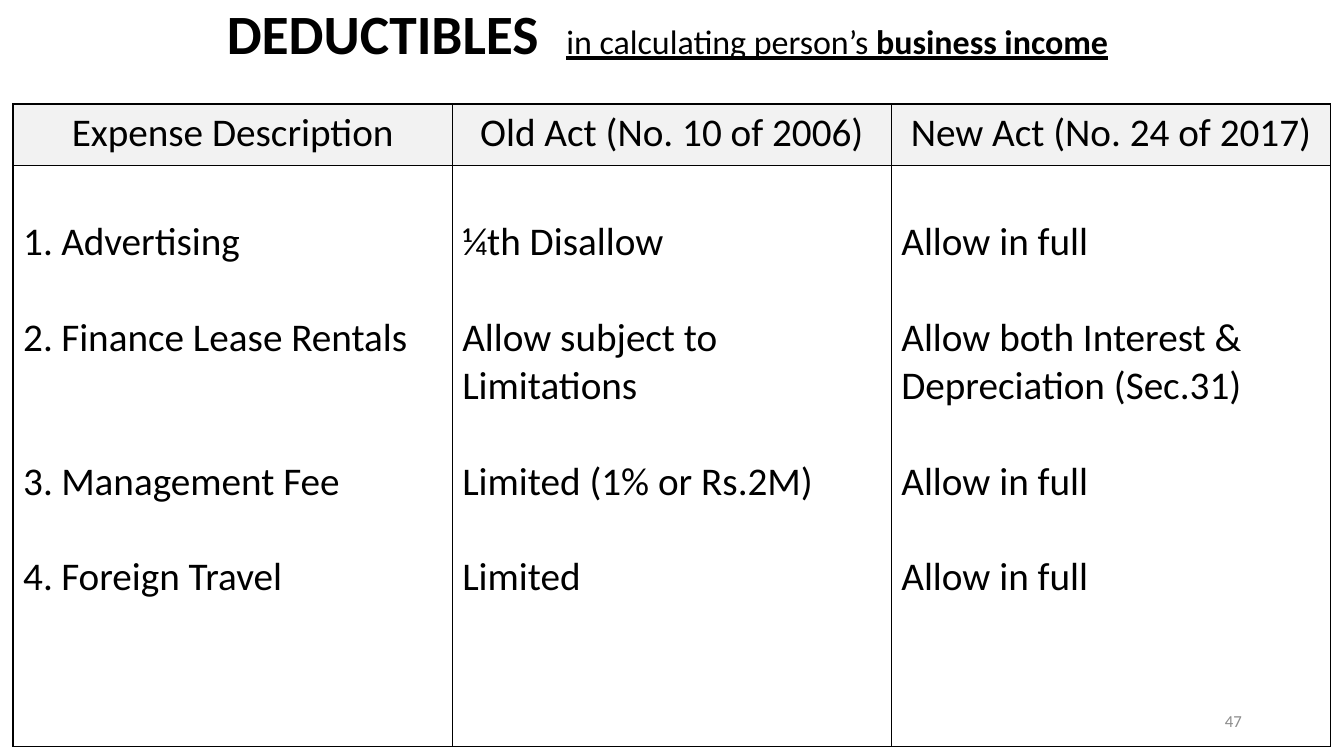
from pptx import Presentation
from pptx.dml.color import RGBColor as Rgb
from pptx.enum.text import MSO_ANCHOR as Anchor, PP_ALIGN as Align
from pptx.oxml.ns import qn
from pptx.util import Cm, Pt
from lxml.etree import SubElement as Sub

INK = {"text": "000000", "head": "F2F2F2", "body": "FFFFFF", "page": "8C8C8C"}
FACE = "Calibri"
SIZE = 28
LINE = 34.2
HEADS = ["Expense Description", "Old Act (No. 10 of 2006)", "New Act (No. 24 of 2017)"]
ITEMS = [
    ["Advertising", "Finance Lease Rentals", "Management Fee", "Foreign Travel"],
    ["¼th Disallow", "Allow subject to Limitations", "Limited (1% or Rs.2M)", "Limited"],
    ["Allow in full", "Allow both Interest & Depreciation (Sec.31)",
     "Allow in full", "Allow in full"],
]


def style(font, size, ink="text"):
    """Set the face, size and colour of a font."""
    font.name = FACE
    font.size = Pt(size)
    font.color.rgb = Rgb.from_string(INK[ink])


def place(shape, left, top, width, height):
    """Move and size a shape, in centimetres."""
    shape.left, shape.top = Cm(left), Cm(top)
    shape.width, shape.height = Cm(width), Cm(height)


def number(para):
    """Give a paragraph an automatic number and a hanging indent."""
    props = para._p.get_or_add_pPr()
    props.set("marL", str(Cm(0.96)))
    props.set("indent", str(-Cm(0.96)))
    Sub(props, qn("a:buFont"), typeface=FACE)
    Sub(props, qn("a:buAutoNum"), type="arabicPeriod")


def frame(cell, ink):
    """Fill a cell and rule its four sides."""
    props = cell._tc.get_or_add_tcPr()
    for side in ("lnL", "lnR", "lnT", "lnB"):
        line = Sub(props, qn("a:" + side), w=str(Pt(1)))
        fill = Sub(line, qn("a:solidFill"))
        Sub(fill, qn("a:srgbClr"), val=INK["text"])
    cell.fill.solid()
    cell.fill.fore_color.rgb = Rgb.from_string(INK[ink])


def add_head(slide):
    """Write the title in its placeholder."""
    title = slide.shapes.title
    place(title, 1.02, -1.57, 31.6, 3.45)
    title.text_frame.vertical_anchor = Anchor.MIDDLE
    para = title.text_frame.paragraphs[0]
    para.alignment = Align.CENTER
    for text, size, bold, under in (
        ("DEDUCTIBLES", 39.6, True, False),
        (" ", 86.4, False, False),
        ("in calculating person’s ", 24.3, False, True),
        ("business income", 24.3, True, True),
    ):
        run = para.add_run()
        run.text = text
        style(run.font, size)
        run.font.bold = bold
        run.font.underline = under


def fill_list(cell, items, listed):
    """Write one column of entries, spaced so that the rows line up."""
    cell.margin_top = Cm(1.33)
    cell.text = "\n".join(items)
    for i, para in enumerate(cell.text_frame.paragraphs):
        if i:
            para.space_before = Pt(LINE * (2 if listed and i == 2 else 1))
        if listed:
            number(para)
        style(para.font, SIZE)


def add_grid(slide):
    """Add the table that compares the two acts."""
    grid = slide.shapes.add_table(
        2, 3, Cm(0.33), Cm(2.62), Cm(33.2), Cm(16.2)).table
    grid.horz_banding = False
    grid.rows[0].height, grid.rows[1].height = Cm(1.55), Cm(14.65)
    for col, (head, items) in enumerate(zip(HEADS, ITEMS)):
        top, body = grid.cell(0, col), grid.cell(1, col)
        frame(top, "head")
        frame(body, "body")
        top.text = head
        para = top.text_frame.paragraphs[0]
        para.alignment = Align.CENTER
        style(para.font, SIZE)
        para.font.bold = False
        fill_list(body, items, col == 0)


def add_page(slide):
    """Add the page number."""
    box = slide.shapes.add_textbox(Cm(23.93), Cm(17.65), Cm(7.62), Cm(1.02))
    box.text_frame.word_wrap = True
    box.text_frame.vertical_anchor = Anchor.MIDDLE
    para = box.text_frame.paragraphs[0]
    para.text = "47"
    para.alignment = Align.RIGHT
    style(para.font, 12, "page")


def main():
    """Build the slide and save it."""
    deck = Presentation()
    deck.slide_width, deck.slide_height = Cm(33.87), Cm(19.05)
    slide = deck.slides.add_slide(deck.slide_layouts[5])
    add_head(slide)
    add_grid(slide)
    add_page(slide)
    deck.save("out.pptx")


if __name__ == "__main__":
    main()
